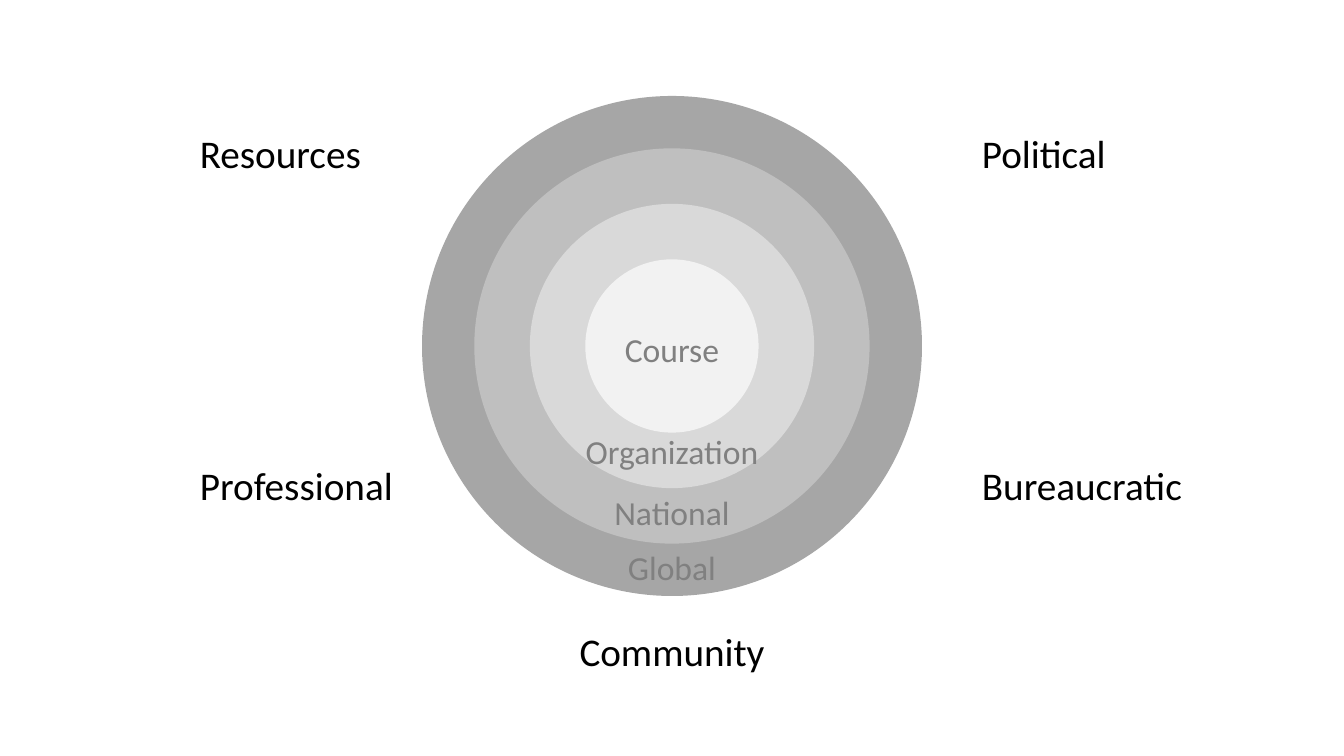
import pptx
import pptx.util
import pptx.dml.color
import pptx.enum.shapes
import pptx.enum.text

EMU_PER_PX = 914400 / 100.8
SLIDE_WIDTH, SLIDE_HEIGHT = 1344, 756
CENTER_X, CENTER_Y = 672, 346
CORE_DIAMETER = 167
DIAMETER_STEP = 111
LEVEL_WIDTH, LEVEL_HEIGHT = 200, 50
FORCE_HEIGHT = 57

# Outermost level first: name, fill, outline width in points, top of its label
LEVELS = [
    ("Global", "A6A6A6", 0, 542),
    ("National", "BFBFBF", 4.5, 487),
    ("Organization", "D9D9D9", 4.5, 426),
    ("Course", "F2F2F2", 4.5, 324),
]
# Name, left, top, width, centred
FORCES = [
    ("Resources", 190, 124, 194, False),
    ("Political", 972, 124, 194, False),
    ("Professional", 190, 456, 226, False),
    ("Bureaucratic", 972, 456, 266, False),
    ("Community", 529, 622, 286, True),
]


def px(length):
    return pptx.util.Emu(round(length * EMU_PER_PX))


def rgb(color):
    return pptx.dml.color.RGBColor.from_string(color)


def add_text(slide, text, left, top, width, height, size=28, color="000000", centered=False):
    box = slide.shapes.add_textbox(px(left), px(top), px(width), px(height))
    box.text_frame.word_wrap = True
    para = box.text_frame.paragraphs[0]
    align = pptx.enum.text.PP_ALIGN
    para.alignment = align.CENTER if centered else align.LEFT
    span = para.add_run()
    span.text = text
    span.font.name = "Calibri"
    span.font.size = pptx.util.Pt(size)
    span.font.color.rgb = rgb(color)


def add_ring(slide, diameter, color, outline, solid):
    kinds = pptx.enum.shapes.MSO_SHAPE
    ring = slide.shapes.add_shape(
        kinds.OVAL if solid else kinds.DONUT,
        px(CENTER_X - diameter / 2), px(CENTER_Y - diameter / 2),
        px(diameter), px(diameter),
    )
    ring.shadow.inherit = False
    if not solid:
        ring.adjustments[0] = DIAMETER_STEP / 2 / diameter
    ring.fill.solid()
    ring.fill.fore_color.rgb = rgb(color)
    if outline:
        ring.line.color.rgb = rgb(color)
        ring.line.width = pptx.util.Pt(outline)
    else:
        ring.line.fill.background()


def main():
    deck = pptx.Presentation()
    deck.slide_width, deck.slide_height = px(SLIDE_WIDTH), px(SLIDE_HEIGHT)
    page = deck.slides.add_slide(deck.slide_layouts[6])

    for index, (name, color, outline, top) in enumerate(LEVELS):
        steps_out = len(LEVELS) - 1 - index
        diameter = CORE_DIAMETER + steps_out * DIAMETER_STEP
        add_ring(page, diameter, color, outline, solid=steps_out == 0)

    for name, color, outline, top in reversed(LEVELS):
        add_text(page, name, CENTER_X - LEVEL_WIDTH / 2, top, LEVEL_WIDTH, LEVEL_HEIGHT,
                 size=24, color="808080", centered=True)

    for name, left, top, width, centered in FORCES:
        add_text(page, name, left, top, width, FORCE_HEIGHT, centered=centered)

    deck.save("out.pptx")


if __name__ == "__main__":
    main()
